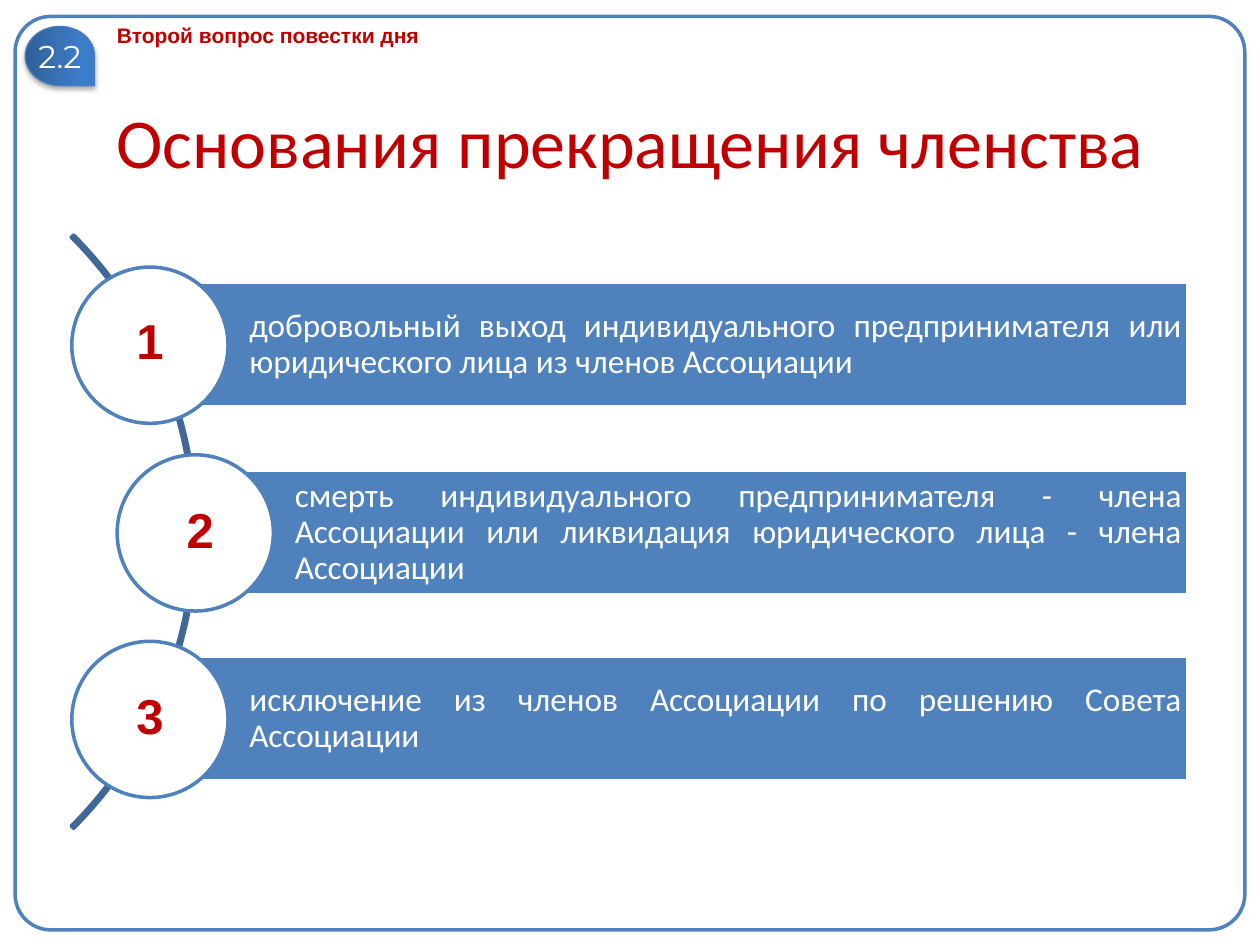
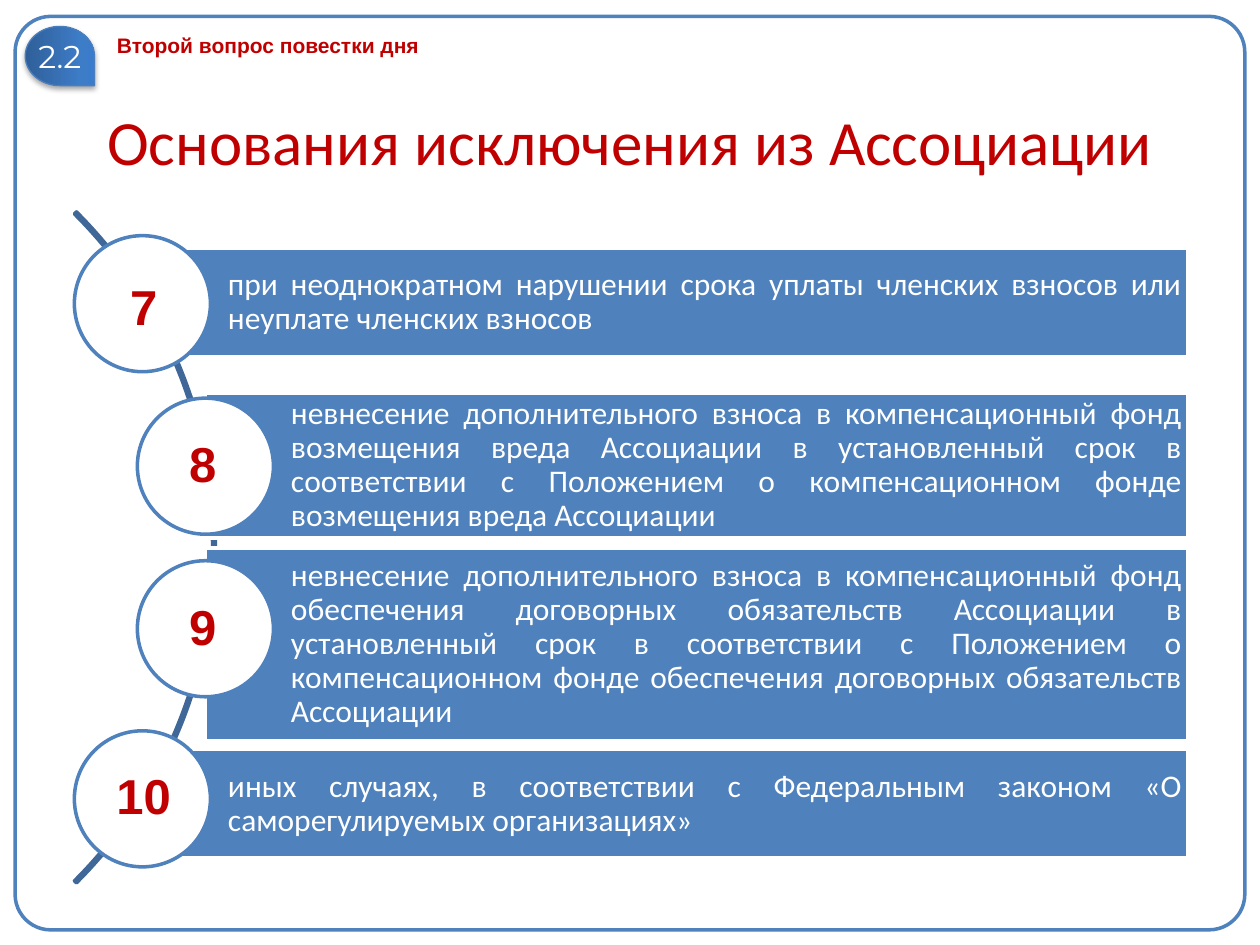
from lxml import etree
from pptx import Presentation
from pptx import util as u
from pptx.dml.color import RGBColor
from pptx.enum import shapes, text
from pptx.oxml.ns import qn

# Content: number, text, disc left and top, bar top and height, number shift
SLIDES = [
    dict(
        title="Основания прекращения членства", size=40, head=(0.13, 8.71),
        arc=(-5.1, 0.89, 6.66, 0.004), disc=1.24, inset=0.79, body=19,
        items=[
            ("1", "добровольный выход индивидуального предпринимателя или "
             "юридического лица из членов Ассоциации",
             0.57, 2.12, 2.24, 0.99, (0, -0.04)),
            ("2", "смерть индивидуального предпринимателя - члена Ассоциации "
             "или ликвидация юридического лица - члена Ассоциации",
             0.93, 3.61, 3.73, 0.99, (0.04, -0.03)),
            ("3", "исключение из членов Ассоциации по решению Совета Ассоциации",
             0.57, 5.09, 5.21, 0.99, (0, -0.03)),
        ]),
    dict(
        title="Основания исключения из Ассоциации", size=36, head=(0.21, 6.38),
        arc=(-5.82, 0.58, 7.53, 0.003), disc=1.08, inset=0.68, body=18,
        items=[
            ("7", "при неоднократном нарушении срока уплаты членских взносов "
             "или неуплате членских взносов",
             0.59, 1.87, 1.97, 0.86, (0.01, 0.02)),
            ("8", "невнесение дополнительного взноса в компенсационный фонд "
             "возмещения вреда Ассоциации в установленный срок в соответствии "
             "с Положением о компенсационном фонде возмещения вреда Ассоциации",
             1.09, 3.16, 3.12, 1.15, (-0.02, -0.02)),
            ("9", "невнесение дополнительного взноса в компенсационный фонд "
             "обеспечения договорных обязательств Ассоциации в установленный "
             "срок в соответствии с Положением о компенсационном фонде "
             "обеспечения договорных обязательств Ассоциации",
             1.09, 4.45, 4.35, 1.53, (-0.02, -0.02)),
            ("10", "иных случаях, в соответствии с Федеральным законом "
             "«О саморегулируемых организациях»",
             0.59, 5.8, 5.95, 0.86, (0.01, -0.03)),
        ]),
]
TOPIC, BADGE = "Второй вопрос повестки дня", "2.2"

# Shared look
RED, BLUE, DARK, WHITE = "C00000", "4F81BD", "3F6797", "FFFFFF"
SHADE = [(0, "2F5F99"), (80, "3D7CC7"), (100, "3A7CCB")]
WIDE, HIGH, EDGE = 10, 7.5, 9.43
NUM = (0.64, 0.57)
KIND, ALIGN, MID = shapes.MSO_SHAPE, text.PP_ALIGN, text.MSO_ANCHOR.MIDDLE


def color(code):
    return RGBColor.from_string(code)


def inches(*vals):
    return [u.Inches(v) for v in vals]


def shape(slide, kind, box, fill=None, line=BLUE, width=2, adj=()):
    part = slide.shapes.add_shape(kind, *inches(*box))
    part.shadow.inherit = False
    for i, val in enumerate(adj):
        part.adjustments[i] = val
    if fill:
        part.fill.solid()
        part.fill.fore_color.rgb = color(fill)
    else:
        part.fill.background()
    part.line.color.rgb = color(line)
    part.line.width = u.Pt(width)
    return part


def write(part, words, size, font, ink, bold=False, align=ALIGN.LEFT,
          anchor=text.MSO_ANCHOR.TOP, wrap=True, pad=(0.1, 0.05, 0.1, 0.05)):
    frame = part.text_frame
    frame.word_wrap = wrap
    frame.vertical_anchor = anchor
    (frame.margin_left, frame.margin_top,
     frame.margin_right, frame.margin_bottom) = inches(*pad)
    para = frame.paragraphs[0]
    para.alignment = align
    run = para.add_run()
    run.text = words
    run.font.size, run.font.name, run.font.bold = u.Pt(size), font, bold
    run.font.color.rgb = color(ink)
    return para


def label(slide, box, *args, **opts):
    write(slide.shapes.add_textbox(*inches(*box)), *args, **opts)


def tint(parent, code):
    return etree.SubElement(parent, qn("a:srgbClr"), val=code)


def badge(slide):
    drop = shape(slide, KIND.TEAR, (0.24, 0.17, 0.47, 0.55),
                 line="4B7EBC", width=0.75)
    drop.rotation = 90
    # Three-stop gradient
    drop.fill.gradient()
    props = drop.fill._xPr
    stops = props.find(".//" + qn("a:gsLst"))
    for old in list(stops):
        stops.remove(old)
    for pos, code in SHADE:
        tint(etree.SubElement(stops, qn("a:gs"), pos=str(pos * 1000)), code)
    props.find(".//" + qn("a:lin")).set("ang", str(270 * 60000))
    # Soft shadow below
    cast = etree.SubElement(
        props.find(qn("a:effectLst")), qn("a:outerShdw"),
        blurRad=str(u.Pt(3.1)), dist=str(u.Pt(1.8)),
        dir=str(90 * 60000), rotWithShape="0")
    etree.SubElement(tint(cast, "000000"), qn("a:alpha"), val="35000")
    # Upright text in the turned drop
    write(drop, BADGE, 18, "Montserrat", WHITE, align=ALIGN.CENTER,
          anchor=MID, wrap=False, pad=(0, 0.05, 0, 0.05))
    drop.text_frame._txBody.bodyPr.set("vert", "vert270")


def base(slide, data):
    # Frame, badge, topic and title
    shape(slide, KIND.ROUNDED_RECTANGLE, (0.12, 0.13, 9.76, 7.25), adj=[0.039])
    badge(slide)
    top, width = data["head"]
    label(slide, (0.83, top, width, 0.3), TOPIC, 12, "Arial", RED, bold=True)
    head = slide.shapes.title
    head.left, head.top, head.width, head.height = inches(0.5, 0.68, 9, 0.87)
    write(head, data["title"], data["size"], "Calibri", RED,
          align=ALIGN.CENTER, anchor=MID)
    head.text_frame.auto_size = text.MSO_AUTO_SIZE.NONE


def steps(slide, data):
    # Arc, then each bar with its disc
    left, top, size, thick = data["arc"]
    shape(slide, KIND.BLOCK_ARC, (left, top, size, size), line=DARK,
          adj=[189, 27, thick])
    disc = data["disc"]
    for num, words, x, y, top, high, (dx, dy) in data["items"]:
        mid = x + disc / 2
        bar = shape(slide, KIND.RECTANGLE, (mid, top, EDGE - mid, high),
                    fill=BLUE, line=WHITE)
        para = write(bar, words, data["body"], "Calibri", WHITE,
                     align=ALIGN.JUSTIFY, anchor=MID,
                     pad=(data["inset"], 0.05, 0.05, 0.05))
        para.line_spacing = 0.9
        shape(slide, KIND.OVAL, (x, y, disc, disc), fill=WHITE)
        spot = (mid - NUM[0] / 2 + dx, y + (disc - NUM[1]) / 2 + dy)
        label(slide, (*spot, *NUM), num, 28, "Arial", RED, bold=True,
              align=ALIGN.CENTER, wrap=False)


def main():
    deck = Presentation()
    deck.slide_width, deck.slide_height = inches(WIDE, HIGH)
    for data in SLIDES:
        slide = deck.slides.add_slide(deck.slide_layouts[5])
        base(slide, data)
        steps(slide, data)
    deck.save("out.pptx")


if __name__ == "__main__":
    main()
